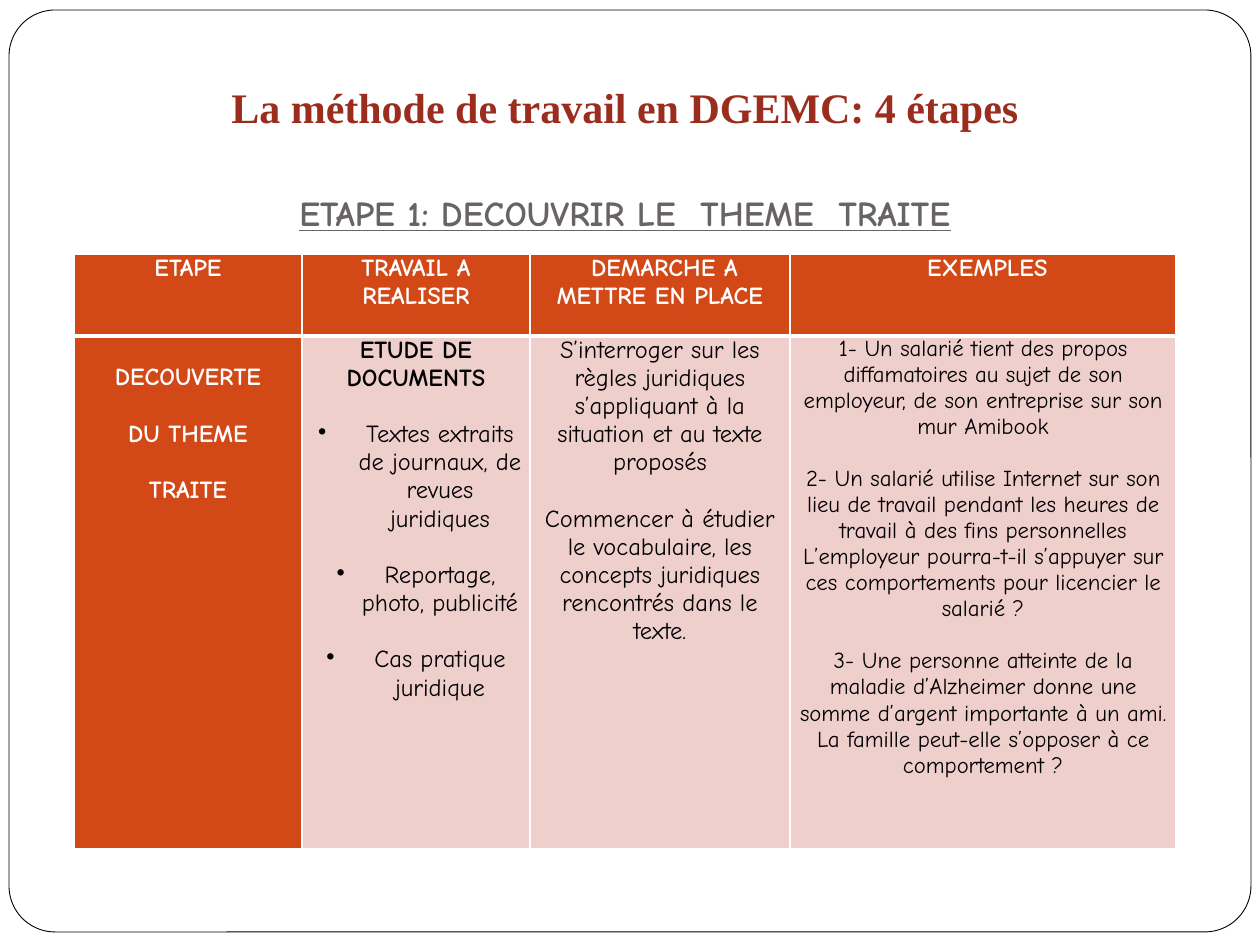
from lxml import etree
from pptx import Presentation
from pptx.dml.color import RGBColor
from pptx.enum.shapes import MSO_SHAPE
from pptx.enum.text import PP_ALIGN
from pptx.oxml.ns import qn
from pptx.util import Pt

PX = 914400 // 126
CENTER = PP_ALIGN.CENTER
ROUNDED = MSO_SHAPE.ROUNDED_RECTANGLE
COLORS = {"white": "FFFFFF", "black": "000000", "title": "9B2D1F",
          "subtitle": "696464", "orange": "D34817", "pink": "EFCFCC"}
SERIF, COMIC = "Times New Roman", "Comic Neue"

TITLE = "La méthode de travail en DGEMC: 4 étapes"
SUBTITLE = "ETAPE 1: DECOUVRIR LE  THEME  TRAITE"
HEADERS = ["ETAPE", "TRAVAIL A REALISER", " DEMARCHE A METTRE EN PLACE", " EXEMPLES"]

# Each paragraph: (text, style, blank lines above it)
STEP = [("DECOUVERTE", "label", 0), ("DU THEME", "label", 1), ("TRAITE", "label", 1)]
WORK = [
    ("ETUDE DE DOCUMENTS", "heading", 0),
    ("Textes extraits de journaux, de revues juridiques", "bullet", 1),
    ("Reportage, photo, publicité", "bullet", 1),
    ("Cas pratique juridique", "bullet", 1),
]
APPROACH = [
    ("S’interroger sur les règles juridiques s’appliquant à la situation "
     "et au texte proposés", "body", 0),
    ("Commencer à étudier le vocabulaire, les concepts juridiques rencontrés "
     "dans le texte.", "body", 1),
]
EXAMPLES = [
    ("1- Un salarié tient des propos diffamatoires au sujet de son employeur, "
     "de son entreprise sur son mur Amibook", "example", 0),
    ("2- Un salarié utilise Internet sur son lieu de travail pendant les heures "
     "de travail à des fins personnelles", "example", 1),
    ("L’employeur pourra-t-il s’appuyer sur ces comportements pour licencier "
     "le salarié ?", "example", 0),
    ("3- Une personne atteinte de la maladie d’Alzheimer donne une somme "
     "d’argent importante à un ami.", "example", 1),
    ("La famille peut-elle s’opposer à ce comportement ?", "example", 0),
]

# Style: (size, bold, color)
STYLES = {"label": (14, True, "white"), "heading": (14, True, "black"),
          "bullet": (14, False, "black"), "body": (14, False, "black"),
          "example": (13, False, "black")}
LINE_HEIGHT = 1.15

# Each row: (height, top border, bottom border, cells)
ROWS = [(82, 1, 3, [[(text, "label", 0)] for text in HEADERS]),
        (513, 3, 1, [STEP, WORK, APPROACH, EXAMPLES])]
COLUMN_WIDTHS = [228, 228, 260, 386]
TABLE_LEFT, TABLE_TOP = 74, 254
STEP_TOP_MARGIN = 28
CELL_MARGIN = 8
BULLET_INDENT = 48


def px(*values):
    return [value * PX for value in values]


def color(name):
    return RGBColor.from_string(COLORS[name])


def set_font(paragraph, name, size, bold, color_name):
    paragraph.alignment = CENTER
    font = paragraph.font
    font.name, font.size, font.bold = name, Pt(size), bold
    font.color.rgb = color(color_name)


def add_bullet(paragraph):
    properties = paragraph._p.get_or_add_pPr()
    indent = BULLET_INDENT * PX
    properties.set("marL", str(indent))
    properties.set("indent", str(-indent))
    bullet = etree.Element(qn("a:buChar"), char="•")
    position = 0
    for index, child in enumerate(properties):
        if child.tag in (qn("a:lnSpc"), qn("a:spcBef"), qn("a:spcAft")):
            position = index + 1
    properties.insert(position, bullet)


def add_borders(cell, top, bottom):
    properties = cell._tc.get_or_add_tcPr()
    for side, width in (("L", 1), ("R", 1), ("T", top), ("B", bottom)):
        line = etree.SubElement(properties, qn(f"a:ln{side}"), w=str(Pt(width)))
        fill = etree.SubElement(line, qn("a:solidFill"))
        etree.SubElement(fill, qn("a:srgbClr"), val=COLORS["white"])


def write_cell(cell, content):
    frame = cell.text_frame
    for index, (text, style, blank_lines) in enumerate(content):
        paragraph = frame.paragraphs[0] if index == 0 else frame.add_paragraph()
        paragraph.text = text
        size, bold, color_name = STYLES[style]
        set_font(paragraph, COMIC, size, bold, color_name)
        if blank_lines:
            paragraph.space_before = Pt(round(blank_lines * size * LINE_HEIGHT, 1))
        if style == "bullet":
            add_bullet(paragraph)


def add_frame(slide):
    frame = slide.shapes.add_shape(ROUNDED, *px(9, 10, 1242, 922))
    frame.adjustments[0] = 0.05
    frame.shadow.inherit = False
    frame.fill.solid()
    frame.fill.fore_color.rgb = color("white")
    frame.line.color.rgb = color("black")
    frame.line.width = Pt(0.5)


def add_titles(slide):
    frame = slide.shapes.add_textbox(*px(55, 75, 1140, 160)).text_frame
    frame.word_wrap = True
    title, subtitle = frame.paragraphs[0], frame.add_paragraph()
    title.text, subtitle.text = TITLE, SUBTITLE
    set_font(title, SERIF, 24, True, "title")
    set_font(subtitle, COMIC, 20, True, "subtitle")
    subtitle.font.underline = True
    subtitle.space_before = Pt(34)


def add_step_table(slide):
    width, height = sum(COLUMN_WIDTHS), sum(row[0] for row in ROWS)
    table = slide.shapes.add_table(len(ROWS), len(COLUMN_WIDTHS),
                                   *px(TABLE_LEFT, TABLE_TOP, width, height)).table
    for column, column_width in zip(table.columns, COLUMN_WIDTHS):
        column.width = column_width * PX
    for row_index, (row_height, top, bottom, contents) in enumerate(ROWS):
        table.rows[row_index].height = row_height * PX
        for column_index, content in enumerate(contents):
            cell = table.cell(row_index, column_index)
            add_borders(cell, top, bottom)
            is_label = row_index == 0 or column_index == 0
            cell.fill.solid()
            cell.fill.fore_color.rgb = color("orange" if is_label else "pink")
            cell.margin_left = cell.margin_right = CELL_MARGIN * PX
            cell.margin_top = STEP_TOP_MARGIN * PX if content is STEP else 0
            cell.margin_bottom = 0
            write_cell(cell, content)


def main():
    presentation = Presentation()
    presentation.slide_width, presentation.slide_height = px(1260, 945)
    slide = presentation.slides.add_slide(presentation.slide_layouts[6])
    add_frame(slide)
    add_titles(slide)
    add_step_table(slide)
    presentation.save("out.pptx")


if __name__ == "__main__":
    main()
